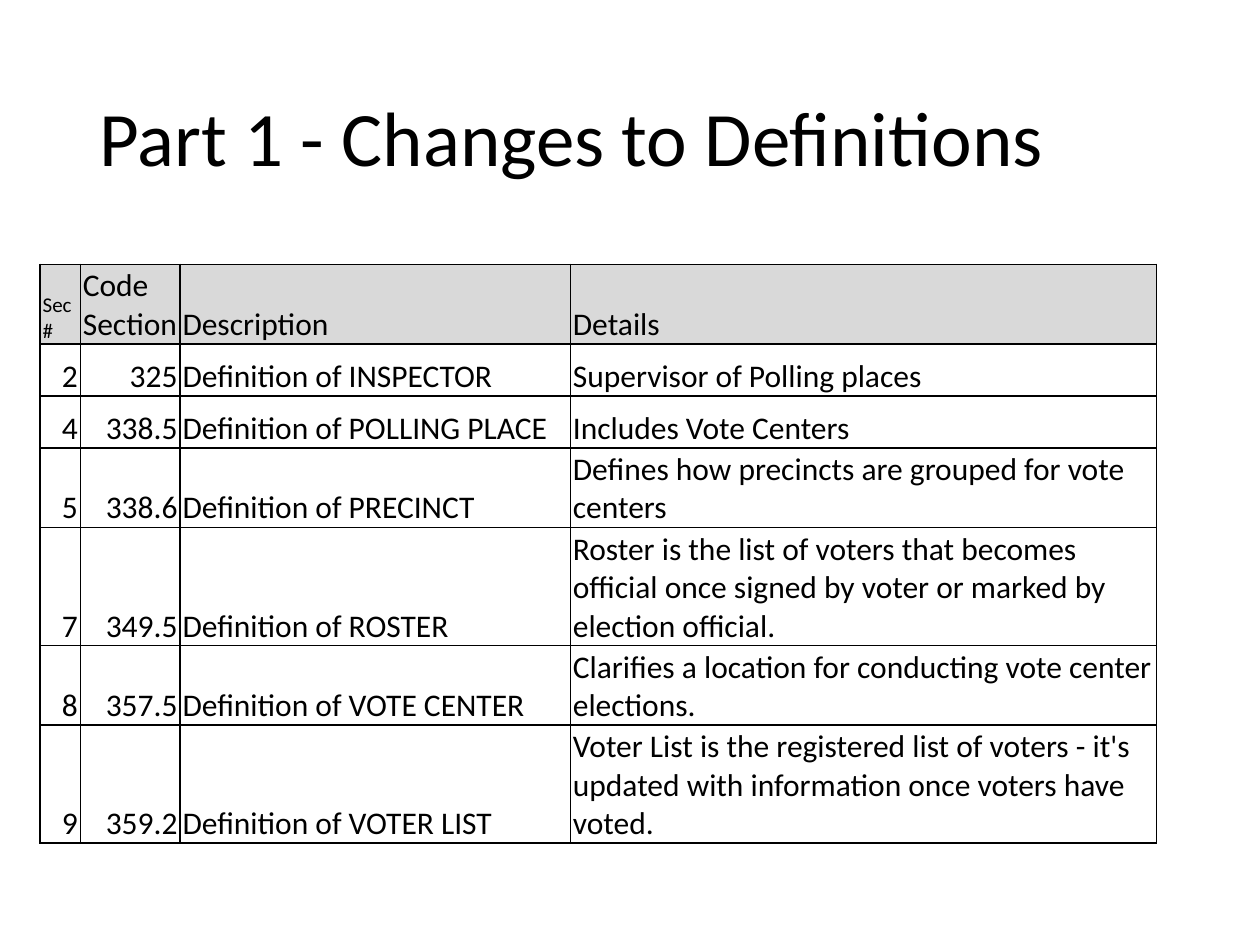
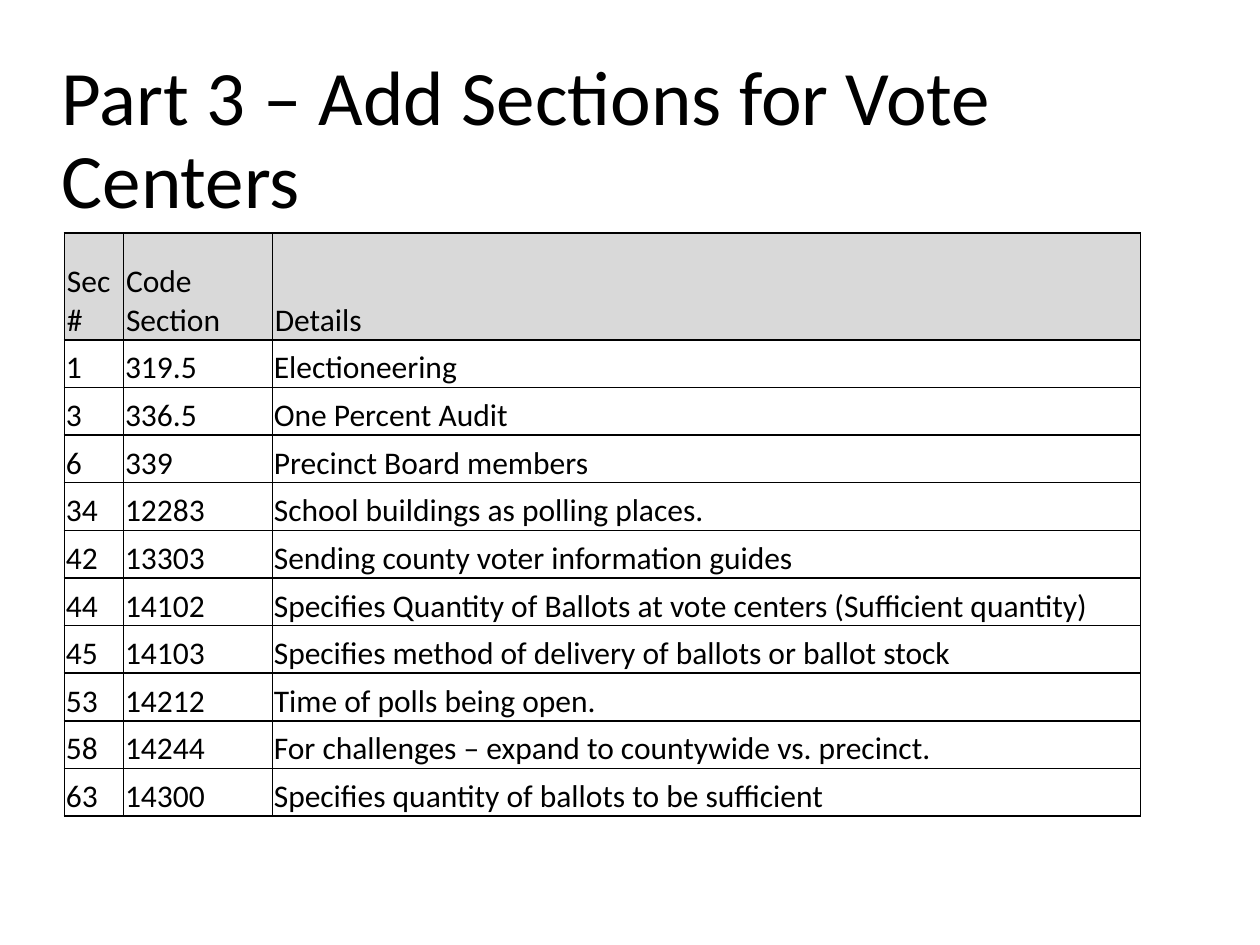
from dataclasses import dataclass

from lxml import etree
from pptx import Presentation
from pptx.dml.color import RGBColor
from pptx.enum.text import MSO_ANCHOR, MSO_AUTO_SIZE, PP_ALIGN
from pptx.oxml.ns import qn
from pptx.util import Cm, Pt

LEFT, RIGHT = PP_ALIGN.LEFT, PP_ALIGN.RIGHT
MIDDLE, BOTTOM = MSO_ANCHOR.MIDDLE, MSO_ANCHOR.BOTTOM
NO_AUTOFIT = MSO_AUTO_SIZE.NONE
TITLE_ONLY = 5


@dataclass(frozen=True)
class Theme:
    font: str = "Calibri"
    text: str = "000000"
    border: str = "000000"
    header_fill: str = "D9D9D9"
    title_size: int = 44
    table_size: int = 18
    small_size: int = 12
    border_width: int = 1


THEME = Theme()

DEFINITIONS = [
    ("Sec#", "Code Section", "Description", "Details"),
    ("2", "325", "Definition of INSPECTOR", "Supervisor of Polling places"),
    ("4", "338.5", "Definition of POLLING PLACE", "Includes Vote Centers"),
    ("5", "338.6", "Definition of PRECINCT",
     "Defines how precincts are grouped for vote centers"),
    ("7", "349.5", "Definition of ROSTER",
     "Roster is the list of voters that becomes official once signed by voter "
     "or marked by election official."),
    ("8", "357.5", "Definition of VOTE CENTER",
     "Clarifies a location for conducting vote center elections."),
    ("9", "359.2", "Definition of VOTER LIST",
     "Voter List is the registered list of voters - it's updated with "
     "information once voters have voted."),
]

VOTE_CENTER_SECTIONS = [
    ("Sec#", "Code Section", "Details"),
    ("1", "319.5", "Electioneering"),
    ("3", "336.5", "One Percent Audit"),
    ("6", "339", "Precinct Board members"),
    ("34", "12283", "School buildings as polling places."),
    ("42", "13303", "Sending county voter information guides"),
    ("44", "14102",
     "Specifies Quantity of Ballots at vote centers (Sufficient quantity)"),
    ("45", "14103", "Specifies method of delivery of ballots or ballot stock"),
    ("53", "14212", "Time of polls being open."),
    ("58", "14244", "For challenges – expand to countywide vs. precinct."),
    ("63", "14300", "Specifies quantity of ballots to be sufficient"),
]


def style_paragraph(p, size, align=LEFT):
    p.alignment = align
    p.font.name = THEME.font
    p.font.size = Pt(size)
    p.font.color.rgb = RGBColor.from_string(THEME.text)


def set_borders(cell):
    """Draw all four cell edges; the line elements must come before the fill."""
    tc_pr = cell._tc.get_or_add_tcPr()
    for i, edge in enumerate(("a:lnL", "a:lnR", "a:lnT", "a:lnB")):
        ln = etree.Element(qn(edge), w=str(Pt(THEME.border_width)))
        fill = etree.SubElement(ln, qn("a:solidFill"))
        etree.SubElement(fill, qn("a:srgbClr"), val=THEME.border)
        tc_pr.insert(i, ln)


def place_title(slide, text, box):
    title = slide.shapes.title
    title.left, title.top, title.width, title.height = map(Cm, box)
    tf = title.text_frame
    tf.text = text
    tf.word_wrap = True
    tf.auto_size = NO_AUTOFIT
    tf.vertical_anchor = MIDDLE
    p = tf.paragraphs[0]
    p.line_spacing = 0.9
    style_paragraph(p, THEME.title_size)


def fill_cell(cell, text, size, align, inset, is_header):
    cell.text = text
    cell.vertical_anchor = BOTTOM
    cell.margin_left = cell.margin_right = cell.margin_top = Cm(inset)
    cell.margin_bottom = 0
    style_paragraph(cell.text_frame.paragraphs[0], size, align)
    if is_header:
        cell.fill.solid()
        cell.fill.fore_color.rgb = RGBColor.from_string(THEME.header_fill)
    else:
        cell.fill.background()
    set_borders(cell)


def place_table(slide, rows, origin, widths, heights, number_align=LEFT,
                body_inset=0.05, first_head_size=THEME.table_size):
    left, top = origin
    table = slide.shapes.add_table(
        len(rows), len(widths), Cm(left), Cm(top),
        Cm(sum(widths)), Cm(sum(heights))).table
    table.first_row = table.horz_banding = False
    for column, width in zip(table.columns, widths):
        column.width = Cm(width)
    for r, (row, height) in enumerate(zip(rows, heights)):
        table.rows[r].height = Cm(height)
        is_header = r == 0
        for c, text in enumerate(row):
            # The first two columns hold section numbers
            align = number_align if c < 2 and not is_header else LEFT
            size = first_head_size if is_header and c == 0 else THEME.table_size
            inset = 0.05 if is_header else body_inset
            fill_cell(table.cell(r, c), text, size, align, inset, is_header)


def add_table_slide(prs, title, title_box, rows, **table_options):
    slide = prs.slides.add_slide(prs.slide_layouts[TITLE_ONLY])
    place_title(slide, title, title_box)
    place_table(slide, rows, **table_options)


def main():
    prs = Presentation()
    prs.slide_width, prs.slide_height = Cm(25.4), Cm(19.05)

    # Changed definitions
    add_table_slide(
        prs, "Part 1 - Changes to Definitions", (1.75, 1.02, 21.9, 3.68),
        DEFINITIONS, origin=(0.81, 5.33), widths=(0.81, 2.01, 7.87, 11.81),
        heights=(1.6, 1.05, 1.05, 1.6, 2.38, 1.6, 2.38),
        number_align=RIGHT, first_head_size=THEME.small_size)

    # Added vote center sections
    add_table_slide(
        prs, "Part 3 – Add Sections for Vote Centers", (0.99, 1.02, 24.26, 3.68),
        VOTE_CENTER_SECTIONS, origin=(1.3, 4.7), widths=(1.19, 3, 17.5),
        heights=[2.15] + [0.96] * (len(VOTE_CENTER_SECTIONS) - 1),
        body_inset=0.03)

    prs.save("out.pptx")


if __name__ == "__main__":
    main()
